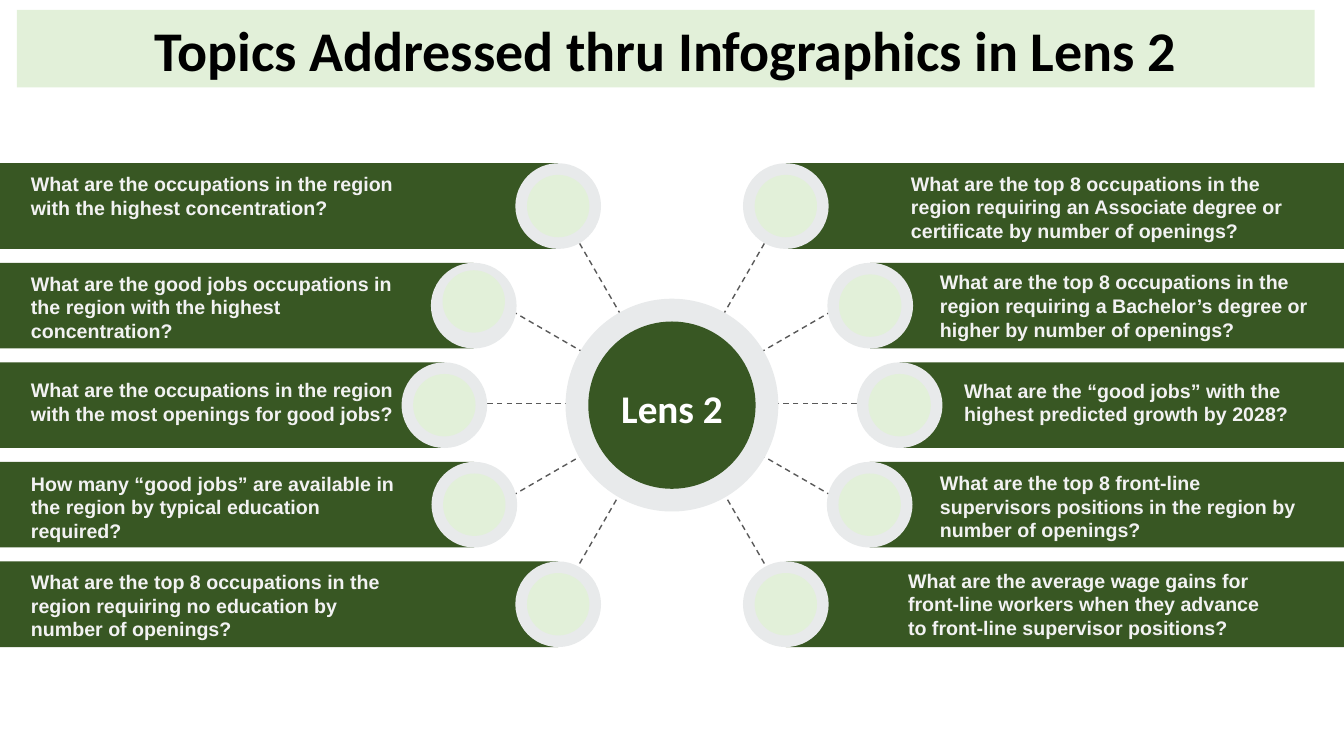
"""Build a slide of ten topics branching from a central Lens 2 hub."""
import math

from lxml import etree
from pptx import Presentation
from pptx import oxml
from pptx.dml.color import RGBColor
from pptx.enum import dml, shapes, text
from pptx.util import Pt

TITLE = "Topics Addressed thru Infographics in Lens 2"
HUB = "Lens 2"
# Each topic: wording, text left, text top, text width
LEFT_TOPICS = [
    ("What are the occupations in the region with the highest concentration?", 15, 119.5, 284),
    ("What are the good jobs occupations in the region with the highest concentration?", 15, 190.5, 284),
    ("What are the occupations in the region with the most openings for good jobs?", 15, 266.4, 284),
    ("How many “good jobs” are available in the region by typical education required?", 15, 333.4, 284),
    ("What are the top 8 occupations in the region requiring no education by number of openings?", 15, 403.6, 288),
]
RIGHT_TOPICS = [
    ("What are the top 8 occupations in the region requiring an Associate degree or certificate by number of openings?",
     643.6, 119.2, 301),
    ("What are the top 8 occupations in the region requiring a Bachelor’s degree or higher by number of openings?",
     664.3, 189.6, 281),
    ("What are the “good jobs” with the highest predicted growth by 2028?", 681.6, 267, 264),
    ("What are the top 8 front-line supervisors positions in the region by number of openings?",
     664.3, 333, 281),
    ("What are the average wage gains for front-line workers when they advance to front-line supervisor positions?",
     641.5, 402.6, 281),
]
SIDES = [(1, RIGHT_TOPICS), (-1, LEFT_TOPICS)]
RING_OFFSETS = [81.3, 141.6, 162.6, 141.2, 81.3]
DOT_LIFTS = {(-1, 1): 3}

WIDTH, HEIGHT = 960, 540
CENTRE_X, CENTRE_Y = WIDTH / 2, 289.4
SPOKE_Y, SPOKE_INNER, SPOKE_OUTER, SPOKE_STEP = 288.2, 59, 132, 30
ROW_PITCH, BAR_HEIGHT, DOT_SIZE = 71.1, 61.2, 44.6
GREEN, PALE, GREY, DASH = "385723", "E2F0D9", "E8EAEB", "595959"

deck = Presentation()
deck.slide_width, deck.slide_height = Pt(WIDTH), Pt(HEIGHT)
page = deck.slides.add_slide(deck.slide_layouts[5])


def colour(value):
    return RGBColor.from_string(value)


def add_solid(kind, left, top, width, height, fill):
    shape = page.shapes.add_shape(kind, Pt(left), Pt(top), Pt(width), Pt(height))
    shape.shadow.inherit = False
    shape.fill.solid()
    shape.fill.fore_color.rgb = colour(fill)
    shape.line.fill.background()


def add_disc(x, y, size, fill):
    add_solid(shapes.MSO_SHAPE.OVAL, x - size / 2, y - size / 2, size, size, fill)


def add_spoke(side, row):
    angle = math.radians(SPOKE_STEP * (row - 2))
    ends = [Pt(value) for radius in (SPOKE_OUTER, SPOKE_INNER)
            for value in (CENTRE_X + side * radius * math.cos(angle),
                          SPOKE_Y + radius * math.sin(angle))]
    spoke = page.shapes.add_connector(shapes.MSO_CONNECTOR.STRAIGHT, *ends)
    spoke.line.color.rgb = colour(DASH)
    spoke.line.width = Pt(1)
    spoke.line.dash_style = dml.MSO_LINE.DASH
    etree.SubElement(spoke._element.spPr, oxml.ns.qn("a:effectLst"))


def write(box, wording, font, size, ink, align):
    frame = box.text_frame
    frame.text = wording
    frame.word_wrap = True
    frame.auto_size = text.MSO_AUTO_SIZE.NONE
    para = frame.paragraphs[0]
    para.alignment = align
    span = para.runs[0]
    span.font.name, span.font.size, span.font.bold = font, Pt(size), True
    span.font.color.rgb = colour(ink)


def add_label(wording, left, top, width, height, *style):
    box = page.shapes.add_textbox(Pt(left), Pt(top), Pt(width), Pt(height))
    write(box, wording, *style)


title = page.shapes.title
title.left, title.top, title.width, title.height = Pt(12), Pt(7), Pt(927), Pt(55.5)
title.fill.solid()
title.fill.fore_color.rgb = colour(PALE)
write(title, TITLE, "Calibri", 40, "000000", text.PP_ALIGN.CENTER)
title.text_frame.vertical_anchor = text.MSO_ANCHOR.MIDDLE

for side, topics in SIDES:
    for row in range(len(topics)):
        add_spoke(side, row)

add_disc(CENTRE_X, CENTRE_Y, 152, GREY)
add_disc(CENTRE_X, CENTRE_Y, 119.5, GREEN)
add_label(HUB, 432, 270.7, 96, 41, "Calibri", 28, "FFFFFF", text.PP_ALIGN.CENTER)

for side, topics in SIDES:
    for row, (wording, left, top, width) in enumerate(topics):
        x = CENTRE_X + side * RING_OFFSETS[row]
        y = CENTRE_Y + ROW_PITCH * (row - 2)
        bar_left, bar_right = (x, WIDTH) if side > 0 else (0, x)
        add_solid(shapes.MSO_SHAPE.RECTANGLE, bar_left, y - BAR_HEIGHT / 2,
                  bar_right - bar_left, BAR_HEIGHT, GREEN)
        add_disc(x, y, BAR_HEIGHT, GREY)
        add_disc(x, y - DOT_LIFTS.get((side, row), 0), DOT_SIZE, PALE)
        add_label(wording, left, top, width, 58, "Arial", 14, "F2F2F2", text.PP_ALIGN.LEFT)

deck.save("out.pptx")
